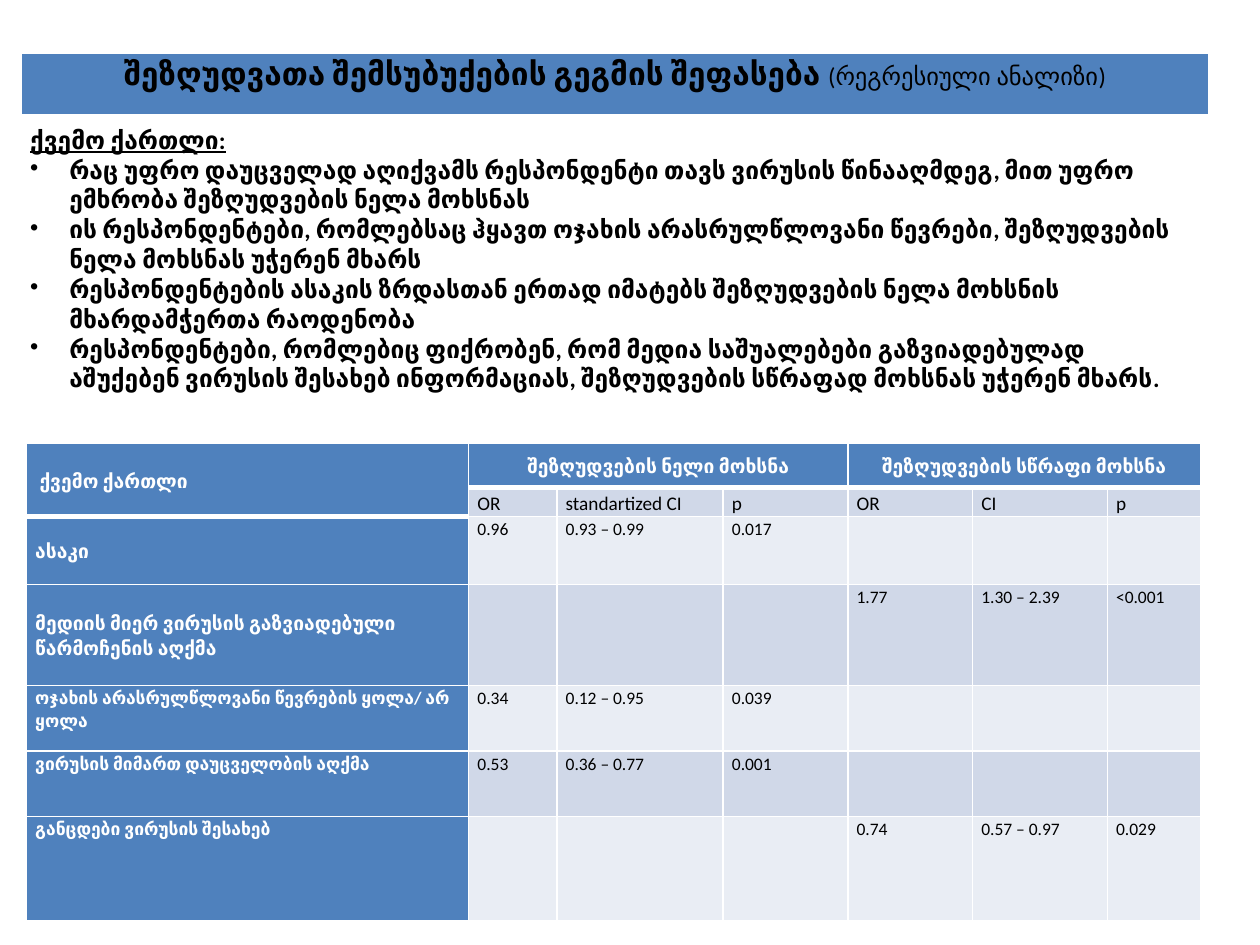
from dataclasses import dataclass

from lxml import etree
from pptx import Presentation
from pptx import util as u
from pptx.dml.color import RGBColor
from pptx.enum import text
from pptx.oxml import ns

BLUE = RGBColor(0x4F, 0x81, 0xBD)
DARK_BAND = RGBColor(0xD0, 0xD8, 0xE8)
LIGHT_BAND = RGBColor(0xE9, 0xED, 0xF4)
WHITE = RGBColor(0xFF, 0xFF, 0xFF)
BLACK = RGBColor(0, 0, 0)

FONT = "Calibri"
LEFT, CENTER = text.PP_ALIGN.LEFT, text.PP_ALIGN.CENTER
TOP, MIDDLE = text.MSO_ANCHOR.TOP, text.MSO_ANCHOR.MIDDLE


@dataclass(frozen=True)
class Style:
    fill: RGBColor
    color: RGBColor = BLACK
    size: float = 10
    bold: bool = False
    align: text.PP_ALIGN = LEFT
    anchor: text.MSO_ANCHOR = TOP
    bottom: float = 1
    margin_top: float = 0.01
    line_spacing: float = 1.07
    space_after: float = 8


@dataclass(frozen=True)
class Row:
    label: str
    values: tuple
    height: float
    first_column: int = 1
    size: float = 10
    anchor: text.MSO_ANCHOR = TOP


TITLE = Style(BLUE, size=18, bold=True, align=CENTER, bottom=3, margin_top=0, space_after=0)
FINDING = Style(WHITE, size=14, bold=True, bottom=3, margin_top=0, line_spacing=1, space_after=0)
GROUP = Style(BLUE, WHITE, 11, True, CENTER, MIDDLE, 3)
CORNER = Style(BLUE, WHITE, 11, True, LEFT, MIDDLE, 3)
MEASURE = Style(DARK_BAND, size=11, anchor=MIDDLE)

FINDINGS = [
    "რაც უფრო დაუცველად აღიქვამს რესპონდენტი თავს ვირუსის წინააღმდეგ, "
    "მით უფრო ემხრობა შეზღუდვების ნელა მოხსნას",
    "ის რესპონდენტები, რომლებსაც ჰყავთ ოჯახის არასრულწლოვანი წევრები, "
    "შეზღუდვების ნელა მოხსნას უჭერენ მხარს",
    "რესპონდენტების ასაკის ზრდასთან ერთად იმატებს შეზღუდვების ნელა მოხსნის "
    "მხარდამჭერთა რაოდენობა",
    "რესპონდენტები, რომლებიც ფიქრობენ, რომ მედია საშუალებები გაზვიადებულად "
    "აშუქებენ ვირუსის შესახებ ინფორმაციას, შეზღუდვების სწრაფად მოხსნას უჭერენ მხარს.",
]
MEASURES = ["OR", "standartized CI", "p", "OR", "CI", "p"]
COLUMNS = [3.51, 0.7, 1.32, 0.99, 0.99, 1.07, 0.74]
HEADER_HEIGHTS = [0.35, 0.23]
ROWS = [
    Row("ასაკი", ("0.96", "0.93 – 0.99", "0.017"), 0.54, 1, 11, MIDDLE),
    Row("მედიის მიერ ვირუსის გაზვიადებული წარმოჩენის აღქმა",
        ("1.77", "1.30 – 2.39", "<0.001"), 0.8, 4, 11, MIDDLE),
    Row("ოჯახის არასრულწლოვანი წევრების ყოლა/ არ ყოლა",
        ("0.34", "0.12 – 0.95", "0.039"), 0.52),
    Row("ვირუსის მიმართ დაუცველობის აღქმა", ("0.53", "0.36 – 0.77", "0.001"), 0.52),
    Row("განცდები ვირუსის შესახებ", ("0.74", "0.57 – 0.97", "0.029"), 0.83, 4),
]


def add_table(s, left: float, top: float, widths: list, heights: list):
    tbl = s.shapes.add_table(
        len(heights), len(widths), u.Inches(left), u.Inches(top),
        u.Inches(sum(widths)), u.Inches(sum(heights))).table
    tbl.first_row = tbl.horz_banding = False
    for column, width in zip(tbl.columns, widths):
        column.width = u.Inches(width)
    for row, height in zip(tbl.rows, heights):
        row.height = u.Inches(height)
    return tbl


def set_borders(cell, bottom: float) -> None:
    props = cell._tc.get_or_add_tcPr()
    for i, (tag, width) in enumerate(
            [("a:lnL", 1), ("a:lnR", 1), ("a:lnT", 1), ("a:lnB", bottom)]):
        line = etree.Element(ns.qn(tag), w=str(int(u.Pt(width))))
        fill = etree.SubElement(line, ns.qn("a:solidFill"))
        etree.SubElement(fill, ns.qn("a:srgbClr"), val=str(WHITE))
        props.insert(i, line)


def style_paragraph(p, style: Style) -> None:
    p.alignment = style.align
    p.line_spacing = style.line_spacing
    p.space_after = u.Pt(style.space_after)
    p.font.name = FONT
    p.font.size = u.Pt(style.size)
    p.font.bold = style.bold
    p.font.color.rgb = style.color


def fill_cell(cell, content: str, style: Style) -> None:
    cell.fill.solid()
    cell.fill.fore_color.rgb = style.fill
    cell.vertical_anchor = style.anchor
    cell.margin_left = cell.margin_right = u.Inches(0.07)
    cell.margin_top = u.Inches(style.margin_top)
    cell.margin_bottom = 0
    set_borders(cell, style.bottom)
    p = cell.text_frame.paragraphs[0]
    if content:
        p.add_run().text = content
    style_paragraph(p, style)


def add_bullet(tf, content: str, style: Style) -> None:
    p = tf.add_paragraph()
    p.add_run().text = content
    style_paragraph(p, style)
    props = p._p.get_or_add_pPr()
    indent = int(u.Inches(0.31))
    props.set("marL", str(indent))
    props.set("indent", str(-indent))
    bullet = etree.Element(ns.qn("a:buChar"), char="•")
    props.find(ns.qn("a:defRPr")).addprevious(bullet)


def add_title(s) -> None:
    cell = add_table(s, 0.17, 0.42, [9.42], [0.5]).cell(0, 0)
    fill_cell(cell, "შეზღუდვათა შემსუბუქების გეგმის შეფასება ", TITLE)
    r = cell.text_frame.paragraphs[0].add_run()
    r.text = "(რეგრესიული ანალიზი)"
    r.font.size = u.Pt(14)
    r.font.bold = False


def add_findings(s) -> None:
    cell = add_table(s, 0.17, 1, [9.42], [2.33]).cell(0, 0)
    fill_cell(cell, "ქვემო ქართლი:", FINDING)
    tf = cell.text_frame
    tf.paragraphs[0].runs[0].font.underline = True
    for finding in FINDINGS:
        add_bullet(tf, finding, FINDING)


def add_regression(s) -> None:
    heights = HEADER_HEIGHTS + [row.height for row in ROWS]
    tbl = add_table(s, 0.21, 3.52, COLUMNS, heights)
    headers = ["\N{NO-BREAK SPACE}ქვემო ქართლი", "შეზღუდვების ნელი მოხსნა", "", "",
               "შეზღუდვების სწრაფი მოხსნა", "", ""]
    for j, header in enumerate(headers):
        fill_cell(tbl.cell(0, j), header, GROUP if j else CORNER)
    fill_cell(tbl.cell(1, 0), "", CORNER)
    for j, measure in enumerate(MEASURES, 1):
        fill_cell(tbl.cell(1, j), measure, MEASURE)
    tbl.cell(0, 0).merge(tbl.cell(1, 0))
    for j in (1, 4):
        tbl.cell(0, j).merge(tbl.cell(0, j + 2))

    for i, row in enumerate(ROWS):
        label = Style(BLUE, WHITE, row.size, True, anchor=row.anchor)
        fill_cell(tbl.cell(i + 2, 0), row.label, label)
        band = Style(DARK_BAND if i % 2 else LIGHT_BAND)
        values = dict(enumerate(row.values, row.first_column))
        for j in range(1, len(COLUMNS)):
            fill_cell(tbl.cell(i + 2, j), values.get(j, ""), band)


def main() -> None:
    prs = Presentation()
    prs.slide_width = u.Inches(10)
    prs.slide_height = u.Inches(7.5)
    s = prs.slides.add_slide(prs.slide_layouts[6])
    add_title(s)
    add_findings(s)
    add_regression(s)
    prs.save("out.pptx")


if __name__ == "__main__":
    main()
